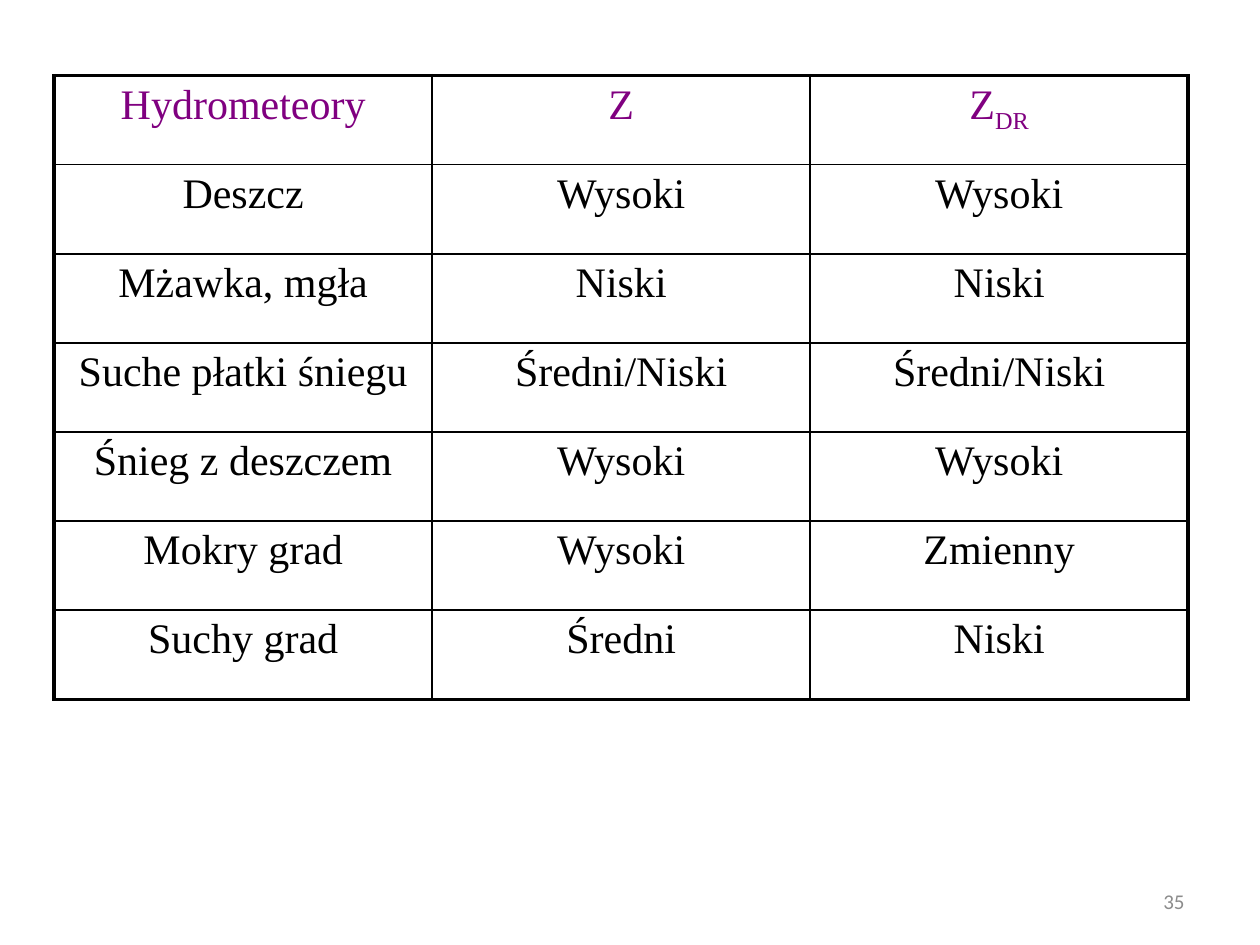
from dataclasses import dataclass

from lxml import etree
from pptx import Presentation
from pptx.dml.color import RGBColor
from pptx.enum.text import MSO_ANCHOR, PP_ALIGN
from pptx.oxml.ns import qn
from pptx.util import Inches, Pt

CENTER, RIGHT = PP_ALIGN.CENTER, PP_ALIGN.RIGHT
MIDDLE = MSO_ANCHOR.MIDDLE


@dataclass(frozen=True)
class Theme:
    header: RGBColor = RGBColor(0x80, 0x00, 0x80)
    ink: RGBColor = RGBColor(0, 0, 0)
    muted: RGBColor = RGBColor(0x8C, 0x8C, 0x8C)
    table_font: str = "Times New Roman"
    number_font: str = "Calibri"
    table_size: int = 24
    number_size: int = 12
    outer: float = 2.25
    inner: float = 1


T = Theme()

ROWS = [
    ("Hydrometeory", "Z", "Z"),
    ("Deszcz", "Wysoki", "Wysoki"),
    ("Mżawka, mgła", "Niski", "Niski"),
    ("Suche płatki śniegu", "Średni/Niski", "Średni/Niski"),
    ("Śnieg z deszczem", "Wysoki", "Wysoki"),
    ("Mokry grad", "Wysoki", "Zmienny"),
    ("Suchy grad", "Średni", "Niski"),
]


def style(p, align, font, size, color):
    p.alignment = align
    p.font.name = font
    p.font.size = Pt(size)
    p.font.color.rgb = color


def set_borders(cell, widths):
    tcPr = cell._tc.get_or_add_tcPr()
    for i, (side, width) in enumerate(widths.items()):
        ln = etree.Element(qn(f"a:ln{side}"), w=str(Pt(width)))
        fill = etree.SubElement(ln, qn("a:solidFill"))
        etree.SubElement(fill, qn("a:srgbClr"), val=str(T.ink))
        tcPr.insert(i, ln)


prs = Presentation()
prs.slide_width, prs.slide_height = Inches(10), Inches(7.5)
s = prs.slides.add_slide(prs.slide_layouts[6])

number = s.shapes.add_textbox(Inches(7.17), Inches(6.95), Inches(2.33), Inches(0.4))
tf = number.text_frame
tf.word_wrap = True
tf.vertical_anchor = MIDDLE
p = tf.paragraphs[0]
p.text = "35"
style(p, RIGHT, T.number_font, T.number_size, T.muted)

last_row, last_col = len(ROWS) - 1, len(ROWS[0]) - 1
table = s.shapes.add_table(
    len(ROWS), len(ROWS[0]), Inches(0.43), Inches(0.6), Inches(9), Inches(4.95)
).table
table.first_row = False
table.horz_banding = False

for i, row in enumerate(ROWS):
    for j, text in enumerate(row):
        cell = table.cell(i, j)
        cell.fill.background()
        set_borders(cell, {
            "L": T.outer if j == 0 else T.inner,
            "R": T.outer if j == last_col else T.inner,
            "T": T.outer if i == 0 else T.inner,
            "B": T.outer if i == last_row else T.inner,
        })
        p = cell.text_frame.paragraphs[0]
        p.text = text
        style(p, CENTER, T.table_font, T.table_size, T.header if i == 0 else T.ink)
        spacing = etree.Element(qn("a:spcBef"))
        etree.SubElement(spacing, qn("a:spcPct"), val="20000")
        p._p.get_or_add_pPr().insert(0, spacing)

r = table.cell(0, last_col).text_frame.paragraphs[0].add_run()
r.text = "DR"
r._r.get_or_add_rPr().set("baseline", "-25000")

prs.save("out.pptx")
